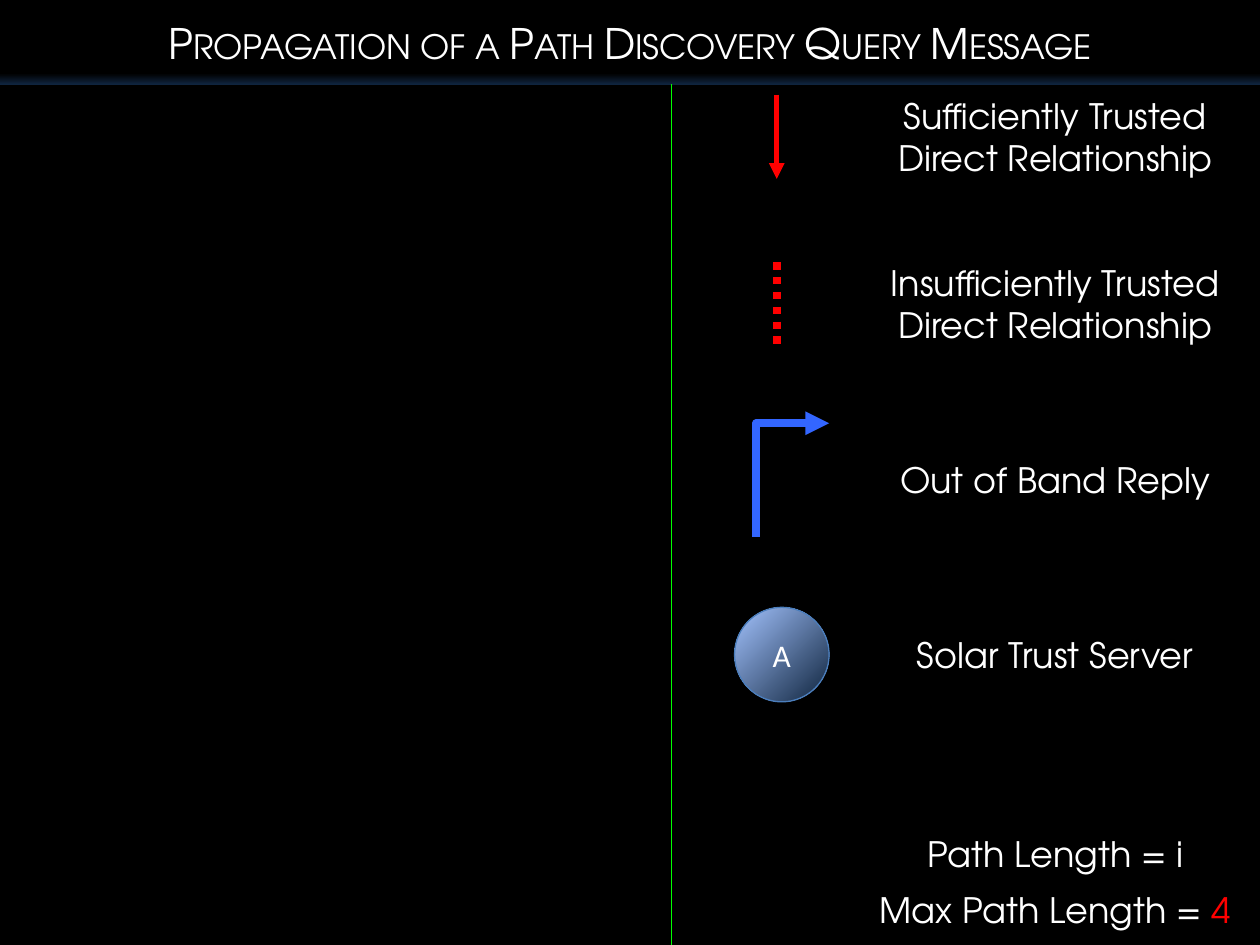
from lxml import etree
from pptx import Presentation
from pptx.dml.color import RGBColor
from pptx.enum.dml import MSO_LINE
from pptx.enum.shapes import MSO_CONNECTOR, MSO_SHAPE
from pptx.enum.text import MSO_ANCHOR, MSO_AUTO_SIZE, PP_ALIGN
from pptx.oxml.ns import qn
from pptx.util import Inches, Pt

BLACK = RGBColor(0x00, 0x00, 0x00)
WHITE = RGBColor(0xFF, 0xFF, 0xFF)
RED = RGBColor(0xFF, 0x00, 0x00)
GREEN = RGBColor(0x00, 0xFF, 0x00)
BLUE = RGBColor(0x33, 0x66, 0xFF)
NAVY = RGBColor(0x0F, 0x24, 0x3E)
LIGHT_BLUE = RGBColor(0xA4, 0xC4, 0xFF)
RIM_BLUE = RGBColor(0x4B, 0x7E, 0xBC)

FONT = "TeX Gyre Adventor"
CENTER, MIDDLE = PP_ALIGN.CENTER, MSO_ANCHOR.MIDDLE
STRAIGHT, ELBOW = MSO_CONNECTOR.STRAIGHT, MSO_CONNECTOR.ELBOW
LABEL_LEFT, LABEL_WIDTH = 6.75, 3.25
BAR_HEIGHT = 0.67


def add_run(p, text, size, color=WHITE, font=FONT):
    r = p.add_run()
    r.text = text
    r.font.size = Pt(size)
    r.font.name = font
    r.font.color.rgb = color
    return r


def set_gradient(fill, *stops):
    fill.gradient()
    for stop, (position, color) in zip(fill.gradient_stops, stops):
        stop.position = position
        stop.color.rgb = color


def add_line(shapes, kind, start, end, color, width, arrow=False):
    line = shapes.add_connector(kind, *map(Inches, start + end))
    line.line.color.rgb = color
    line.line.width = Pt(width)
    if arrow:
        ln = line.line._get_or_add_ln()
        etree.SubElement(ln, qn("a:tailEnd"), type="triangle")
    etree.SubElement(line._element.spPr, qn("a:effectLst"))
    return line


def add_label(shapes, top, height, *runs):
    box = shapes.add_textbox(Inches(LABEL_LEFT), Inches(top),
                             Inches(LABEL_WIDTH), Inches(height))
    tf = box.text_frame
    tf.word_wrap = True
    tf.auto_size = MSO_AUTO_SIZE.SHAPE_TO_FIT_TEXT
    p = tf.paragraphs[0]
    p.alignment = CENTER
    for text, color in runs:
        add_run(p, text, 20, color)


def add_title_bar(title, left, top, width, height):
    title.left, title.top = Inches(left), Inches(top)
    title.width, title.height = Inches(width), Inches(height)
    set_gradient(title.fill, (0.87, BLACK), (1, NAVY))
    title.fill.gradient_angle = 270
    tf = title.text_frame
    tf.auto_size = MSO_AUTO_SIZE.NONE
    tf.vertical_anchor = MIDDLE
    p = tf.paragraphs[0]
    p.alignment = CENTER
    r = add_run(p, "Propagation of a Path Discovery Query Message", 24)
    r.font._element.set("cap", "small")


# Legend symbols, each placed in the box it is given
def trusted_symbol(shapes, left, top, width, height):
    x = left + width / 2
    add_line(shapes, STRAIGHT, (x, top), (x, top + height), RED, 3, arrow=True)


def untrusted_symbol(shapes, left, top, width, height):
    x = left + width / 2
    line = add_line(shapes, STRAIGHT, (x, top), (x, top + height), RED, 4.25)
    line.line.dash_style = MSO_LINE.ROUND_DOT


def reply_symbol(shapes, left, top, width, height):
    # A flipped elbow turned by 90 degrees runs up, then right
    cx, cy = left + width / 2, top + height / 2
    line = add_line(shapes, ELBOW, (cx + height / 2, cy + width / 2),
                    (cx - height / 2, cy - width / 2), BLUE, 4.5, arrow=True)
    sp_pr = line._element.spPr
    sp_pr.find(qn("a:xfrm")).set("rot", str(90 * 60000))
    guides = sp_pr.find(qn("a:prstGeom")).find(qn("a:avLst"))
    etree.SubElement(guides, qn("a:gd"), name="adj1", fmla="val 100000")


def server_symbol(shapes, left, top, width, height):
    s = shapes.add_shape(MSO_SHAPE.OVAL, Inches(left), Inches(top),
                         Inches(width), Inches(height))
    s.shadow.inherit = False
    set_gradient(s.fill, (0, NAVY), (1, LIGHT_BLUE))
    # Radial gradient centred on the bottom right corner
    grad = s._element.spPr.find(qn("a:gradFill"))
    grad.remove(grad.find(qn("a:lin")))
    radial = etree.SubElement(grad, qn("a:path"), path="circle")
    etree.SubElement(radial, qn("a:fillToRect"), l="100000", t="100000")
    s.line.color.rgb = RIM_BLUE
    s.line.width = Pt(0.75)
    tf = s.text_frame
    tf.vertical_anchor = MIDDLE
    p = tf.paragraphs[0]
    p.alignment = CENTER
    add_run(p, "A", 18, font="Calibri")


# Symbol, symbol box, label, label top, label height
LEGEND = [
    (trusted_symbol, (5.83, 0.75, 0.67, 0.67),
     "Sufficiently Trusted Direct Relationship", 0.7, 0.77),
    (untrusted_symbol, (5.83, 2.08, 0.67, 0.67),
     "Insufficiently Trusted Direct Relationship", 2.03, 0.77),
    (reply_symbol, (6, 3.36, 0.58, 0.9), "Out of Band Reply", 3.59, 0.44),
    (server_symbol, (5.83, 4.82, 0.75, 0.75), "Solar Trust Server", 4.98, 0.44),
]


def add_legend(slide):
    for draw_symbol, box, label, top, height in LEGEND:
        group = slide.shapes.add_group_shape()
        add_label(group.shapes, top, height, (label, WHITE))
        draw_symbol(group.shapes, *box)


def main():
    prs = Presentation()
    prs.slide_width, prs.slide_height = Inches(10), Inches(7.5)
    slide = prs.slides.add_slide(prs.slide_layouts[5])
    slide.background.fill.solid()
    slide.background.fill.fore_color.rgb = BLACK

    add_title_bar(slide.shapes.title, 0, 0, 10, BAR_HEIGHT)
    # Divider between the diagram area and the legend
    add_line(slide.shapes, STRAIGHT, (5.33, BAR_HEIGHT), (5.33, 7.5), GREEN, 0.75)
    add_legend(slide)
    # Path length counters
    add_label(slide.shapes, 6.56, 0.44, ("Path Length = i", WHITE))
    add_label(slide.shapes, 7, 0.44, ("Max Path Length = ", WHITE), ("4", RED))

    prs.save("out.pptx")


if __name__ == "__main__":
    main()
